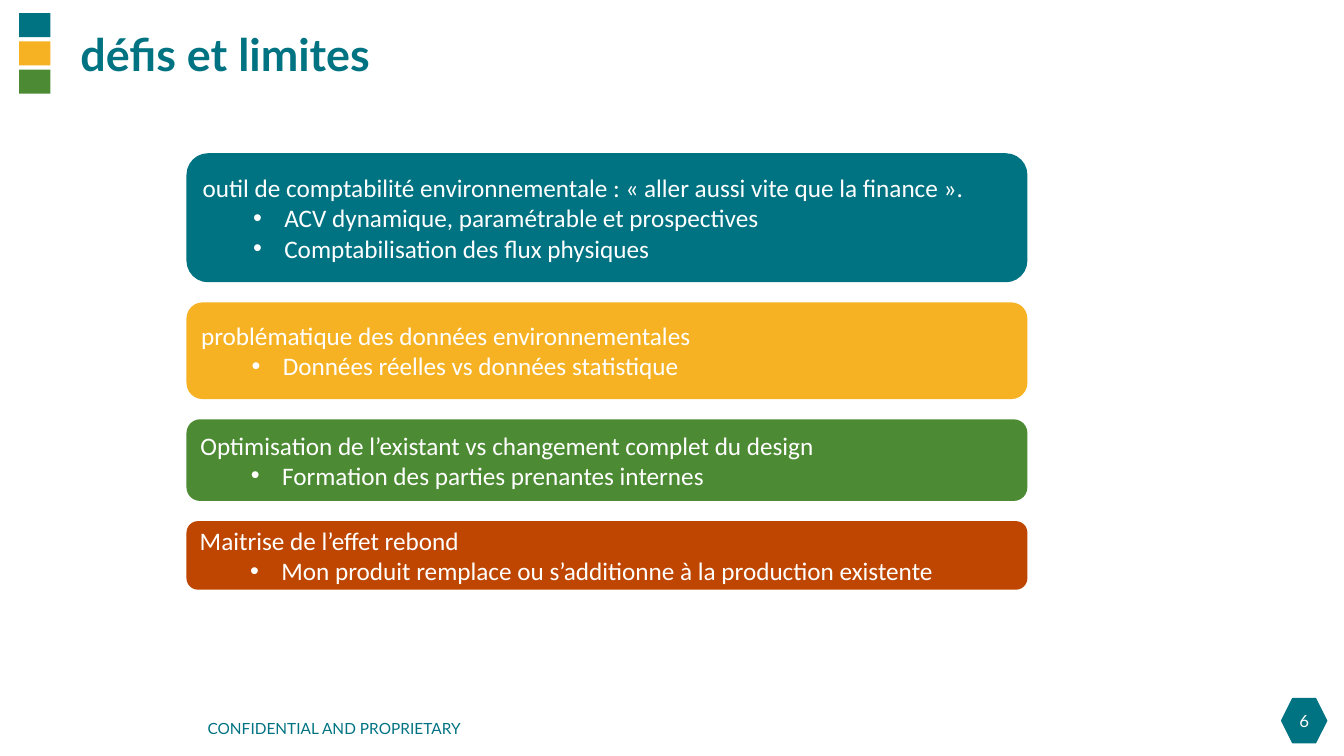
"""Build the « défis et limites » slide: a title, four stacked cards and a footer."""
from dataclasses import dataclass, field
from typing import Any

from lxml.etree import SubElement
from pptx import Presentation
from pptx.dml.color import RGBColor
from pptx.enum.shapes import MSO_SHAPE as Shape
from pptx.enum.text import MSO_ANCHOR as Anchor, PP_ALIGN as Align
from pptx.oxml.ns import qn
from pptx.util import Inches, Pt


@dataclass(frozen=True)
class Theme:
    """Colours, fonts and type sizes of the slide."""
    teal: str = "007382"
    yellow: str = "F6B223"
    green: str = "4C8B33"
    rust: str = "BE4600"
    white: str = "FFFFFF"
    heading_font: str = "Lato"
    body_font: str = "Calibri"
    title_size: int = 32
    card_size: int = 18
    number_size: int = 12
    footer_size: int = 11


THEME = Theme()


@dataclass(frozen=True)
class Area:
    """A rectangle in inches."""
    left: float
    top: float
    width: float
    height: float

    def lengths(self) -> list[int]:
        """Return the rectangle as slide lengths."""
        return [Inches(side) for side in (self.left, self.top, self.width, self.height)]


@dataclass(frozen=True)
class TextStyle:
    """Type, alignment and frame settings of a text."""
    size: int
    color: str
    font: str = THEME.heading_font
    bold: bool = False
    align: Align = Align.LEFT
    frame: dict[str, Any] = field(default_factory=dict)


@dataclass(frozen=True)
class Card:
    """A coloured card with a lead line and bullets."""
    color: str
    height: float
    lead: str
    bullets: tuple[str, ...]


CARDS = (
    Card(THEME.teal, 1.28,
         "outil de comptabilité environnementale : « aller aussi vite que la finance ».",
         ("ACV dynamique, paramétrable et prospectives", "Comptabilisation des flux physiques")),
    Card(THEME.yellow, 0.96, "problématique des données environnementales",
         ("Données réelles vs données statistique",)),
    Card(THEME.green, 0.81, "Optimisation de l’existant vs changement complet du design",
         ("Formation des parties prenantes internes",)),
    Card(THEME.rust, 0.68, "Maitrise de l’effet rebond",
         ("Mon produit remplace ou s’additionne à la production existente",)),
)
CARD_LEFT, CARD_TOP, CARD_WIDTH, CARD_GAP = 1.85, 1.52, 8.34, 0.2
BULLET_INDENT, BULLET_HANG = 0.81, 0.31

MIDDLE = {"vertical_anchor": Anchor.MIDDLE}
TITLE_STYLE = TextStyle(THEME.title_size, THEME.teal, bold=True, frame=MIDDLE)
CARD_STYLE = TextStyle(THEME.card_size, THEME.white, THEME.body_font, frame=MIDDLE)
FOOTER_STYLE = TextStyle(THEME.footer_size, THEME.teal)
NUMBER_STYLE = TextStyle(THEME.number_size, THEME.white, align=Align.CENTER,
                         frame=MIDDLE | {"margin_left": 0, "margin_right": 0})


def apply_format(target: Any, values: dict[str, Any]) -> None:
    """Set each named attribute on the target."""
    for name, value in values.items():
        setattr(target, name, value)


def add_bullet(para: Any) -> None:
    """Give the paragraph a hanging round bullet."""
    para.level = 1
    properties = para._p.get_or_add_pPr()
    properties.set("marL", str(Inches(BULLET_INDENT)))
    properties.set("indent", str(-Inches(BULLET_HANG)))
    SubElement(properties, qn("a:buFont")).set("typeface", "Arial")
    SubElement(properties, qn("a:buChar")).set("char", "•")


def write_text(box: Any, style: TextStyle, lead: str, bullets: tuple[str, ...] = ()) -> None:
    """Write a lead line and its bullets into the box."""
    frame = box.text_frame
    apply_format(frame, {"word_wrap": True} | style.frame)
    for index, line in enumerate((lead, *bullets)):
        para = frame.add_paragraph() if index else frame.paragraphs[0]
        para.alignment = style.align
        if index:
            add_bullet(para)
        span = para.add_run()
        span.text = line
        apply_format(span.font, {"size": Pt(style.size), "name": style.font, "bold": style.bold})
        span.font.color.rgb = RGBColor.from_string(style.color)


def add_block(page: Any, kind: Shape, area: Area, color: str) -> Any:
    """Add a flat shape filled with one colour."""
    block = page.shapes.add_shape(kind, *area.lengths())
    block.shadow.inherit = False
    block.fill.solid()
    block.fill.fore_color.rgb = RGBColor.from_string(color)
    block.line.fill.background()
    return block


def add_label(page: Any, area: Area, style: TextStyle, text: str) -> None:
    """Add a text box with one line."""
    write_text(page.shapes.add_textbox(*area.lengths()), style, text)


def add_page_number(page: Any, number: str) -> None:
    """Add the outlined hexagon with the page number."""
    badge = add_block(page, Shape.HEXAGON, Area(12.71, 6.93, 0.45, 0.44), THEME.teal)
    badge.line.color.rgb = RGBColor.from_string(THEME.teal)
    badge.line.width = Pt(0.75)
    write_text(badge, NUMBER_STYLE, number)


def add_cards(page: Any) -> None:
    """Stack the cards with equal gaps."""
    top = CARD_TOP
    for card in CARDS:
        area = Area(CARD_LEFT, top, CARD_WIDTH, card.height)
        box = add_block(page, Shape.ROUNDED_RECTANGLE, area, card.color)
        write_text(box, CARD_STYLE, card.lead, card.bullets)
        top += card.height + CARD_GAP


def main() -> None:
    """Build and save the deck."""
    deck = Presentation()
    apply_format(deck, {"slide_width": Inches(13.33), "slide_height": Inches(7.5)})
    page = deck.slides.add_slide(deck.slide_layouts[6])
    add_label(page, Area(1.96, 7.08, 2.91, 0.29), FOOTER_STYLE, "CONFIDENTIAL AND PROPRIETARY")
    add_page_number(page, "6")
    for row, color in enumerate((THEME.teal, THEME.yellow, THEME.green)):
        add_block(page, Shape.RECTANGLE, Area(0.19, 0.13 + 0.28 * row, 0.31, 0.24), color)
    add_label(page, Area(0.7, 0.13, 12, 0.8), TITLE_STYLE, "défis et limites")
    add_cards(page)
    deck.save("out.pptx")


if __name__ == "__main__":
    main()
